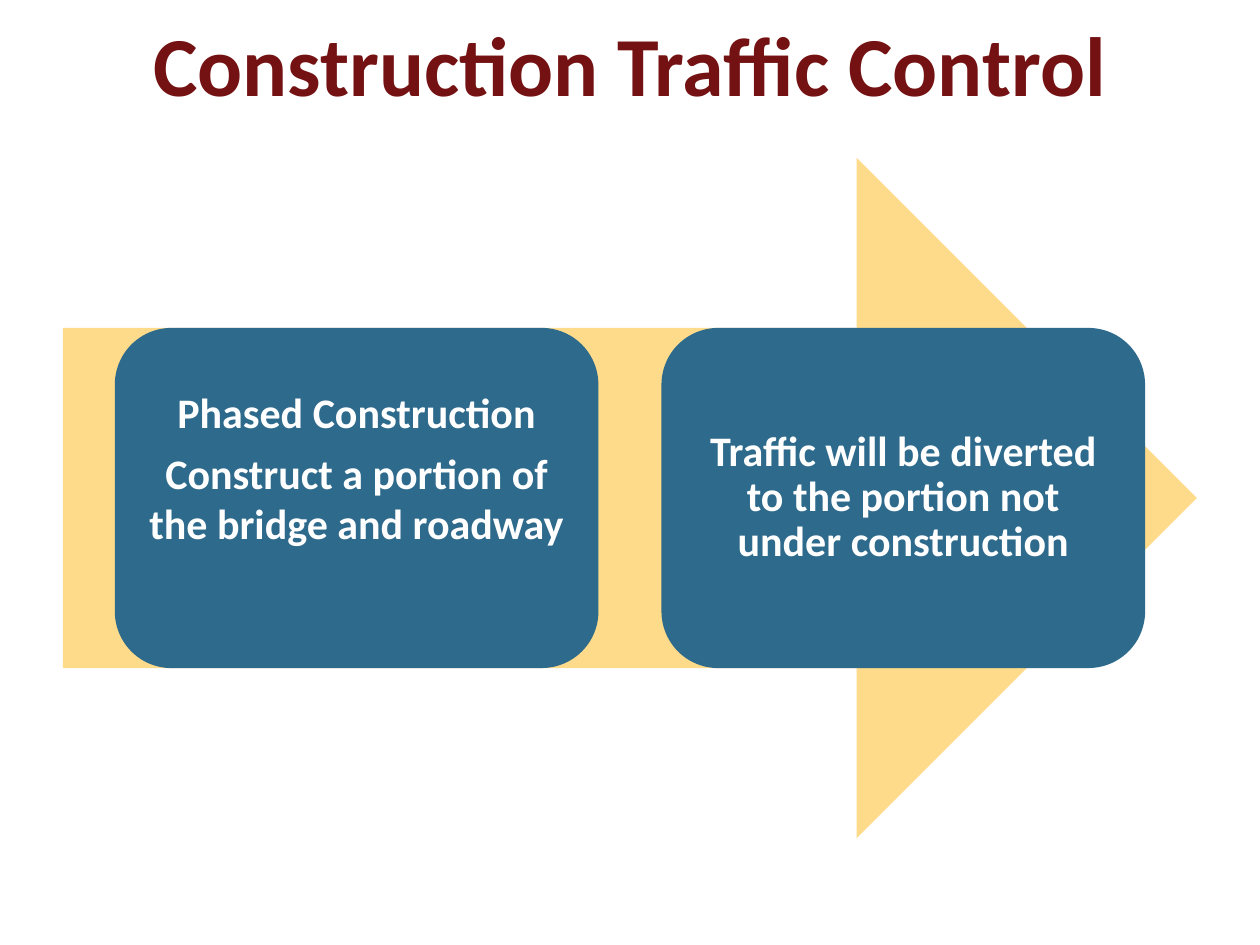
from dataclasses import dataclass

from lxml import etree
from pptx import Presentation
from pptx.dml.color import RGBColor
from pptx.enum.shapes import MSO_SHAPE
from pptx.enum.text import MSO_ANCHOR, MSO_AUTO_SIZE, PP_ALIGN
from pptx.oxml.ns import qn
from pptx.util import Cm, Pt

ARROW = MSO_SHAPE.RIGHT_ARROW
ROUND = MSO_SHAPE.ROUNDED_RECTANGLE
MIDDLE = MSO_ANCHOR.MIDDLE
CENTER = PP_ALIGN.CENTER
FIXED = MSO_AUTO_SIZE.NONE


@dataclass(frozen=True)
class Theme:
    font: str = "Calibri"
    red: RGBColor = RGBColor(0x74, 0x11, 0x12)
    gold: RGBColor = RGBColor(0xFD, 0xB9, 0x17)
    blue: RGBColor = RGBColor(0x2E, 0x6A, 0x8C)
    white: RGBColor = RGBColor(0xFF, 0xFF, 0xFF)
    head: Pt = Pt(48)
    body: Pt = Pt(24)


theme = Theme()


def add_shape(kind, left, top, width, height, color):
    shape = slide.shapes.add_shape(kind, left, top, width, height)
    shape.shadow.inherit = False
    shape.fill.solid()
    shape.fill.fore_color.rgb = color
    shape.line.fill.background()
    return shape


def add_text(para, text, size, color):
    para.alignment = CENTER
    run = para.add_run()
    run.text = text
    run.font.name = theme.font
    run.font.size = size
    run.font.bold = True
    run.font.color.rgb = color


deck = Presentation()
deck.slide_width = Cm(25.4)
deck.slide_height = Cm(19.05)
slide = deck.slides.add_slide(deck.slide_layouts[5])

title = slide.shapes.title
title.left, title.top = Cm(0), Cm(0)
title.width, title.height = deck.slide_width, Cm(2.54)
frame = title.text_frame
frame.word_wrap = True
frame.auto_size = FIXED
frame.vertical_anchor = MIDDLE
add_text(frame.paragraphs[0], "Construction Traffic Control", theme.head, theme.red)

arrow = add_shape(ARROW, Cm(1.27), Cm(3.18), Cm(22.86), Cm(13.72), theme.gold)
tint = arrow.fill._xPr.find(qn("a:solidFill"))[0]
etree.SubElement(tint, qn("a:alpha")).set("val", "50000")

wide, high = Cm(9.75), Cm(5.486 * 1.25)
gap = Cm(1.27)
left = (deck.slide_width - 2 * wide - gap) // 2
top = arrow.top + (arrow.height - high) // 2
pad = Cm(0.25)

steps = [
    (["Phased Construction", "Construct a portion of the bridge and roadway"],
     1.0, Pt(6), Cm(1.5)),
    (["Traffic will be diverted to the portion not under construction"],
     0.9, Pt(8.4), pad),
]

for col, (lines, pitch, after, base) in enumerate(steps):
    card = add_shape(ROUND, left + col * (wide + gap), top, wide, high, theme.blue)
    frame = card.text_frame
    frame.word_wrap = True
    frame.vertical_anchor = MIDDLE
    frame.margin_left = frame.margin_right = frame.margin_top = pad
    frame.margin_bottom = base
    for row, line in enumerate(lines):
        para = frame.add_paragraph() if row else frame.paragraphs[0]
        para.line_spacing = pitch
        para.space_after = after
        add_text(para, line, theme.body, theme.white)

deck.save("out.pptx")
